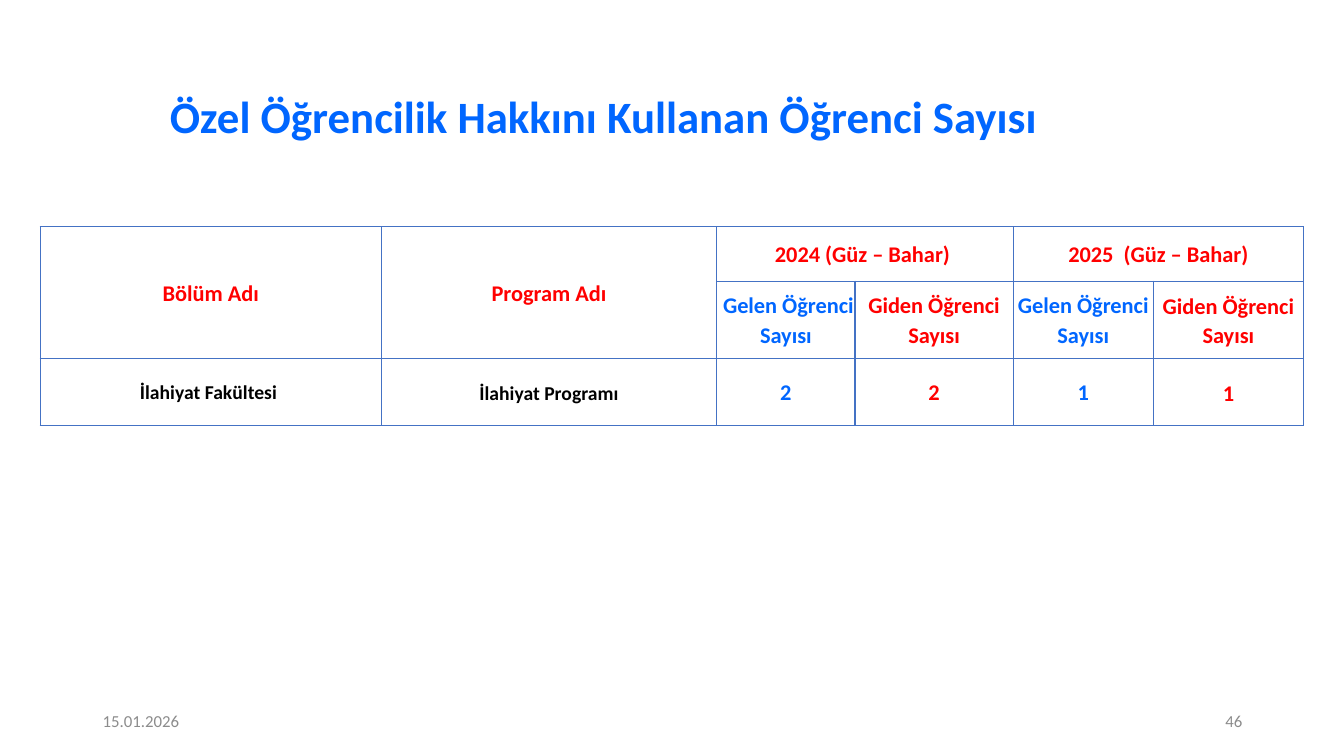
from lxml import etree
from pptx import Presentation
from pptx.dml.color import RGBColor
from pptx.enum import text
from pptx.oxml import ns
from pptx.util import Inches, Pt

# Content
FONT = "Calibri"
RED, BLUE, BLACK, GREY, WHITE, BORDER = (
    "FF0000", "0066FF", "000000", "8C8C8C", "FFFFFF", "4472C4")
TITLE = "Özel Öğrencilik Hakkını Kullanan Öğrenci Sayısı "
FOOTERS = [("15.01.2026", 0.92, text.PP_ALIGN.LEFT),
           ("46", 9.42, text.PP_ALIGN.RIGHT)]
COLUMNS = [3.38, 3.33, 1.37, 1.57, 1.39, 1.49]
ROWS = [0.54, 0.77, 0.66]
MERGES = [(0, 0, 1, 0), (0, 1, 1, 1), (0, 2, 0, 3), (0, 4, 0, 5)]
# row, column, wording, size, colour
CELLS = [
    (0, 0, "Bölüm Adı", 16, RED),
    (0, 1, "Program Adı", 16, RED),
    (0, 2, "2024 (Güz – Bahar) ", 16, RED),
    (0, 4, "2025  (Güz – Bahar)", 16, RED),
    (1, 2, " Gelen Öğrenci Sayısı", 16, BLUE),
    (1, 3, "Giden Öğrenci Sayısı", 16, RED),
    (1, 4, "Gelen Öğrenci Sayısı", 16, BLUE),
    (1, 5, "Giden Öğrenci Sayısı", 16, RED),
    (2, 0, "İlahiyat Fakültesi ", 14, BLACK),
    (2, 1, "İlahiyat Programı", 14, BLACK),
    (2, 2, "2", 16, BLUE),
    (2, 3, "2", 16, RED),
    (2, 4, "1", 16, BLUE),
    (2, 5, "1", 16, RED),
]


def rgb(value):
    return RGBColor.from_string(value)


def write(frame, wording, size, color, align, bold=False, spacing=None):
    para = frame.paragraphs[0]
    para.text = wording
    para.alignment = align
    para.line_spacing = spacing
    font = para.font
    font.name, font.size, font.bold = FONT, Pt(size), bold
    font.color.rgb = rgb(color)


def add_borders(cell):
    props = cell._tc.get_or_add_tcPr()
    for position, side in enumerate(("lnL", "lnR", "lnT", "lnB")):
        line = etree.Element(ns.qn(f"a:{side}"), w=str(Pt(1)))
        fill = etree.SubElement(line, ns.qn("a:solidFill"))
        etree.SubElement(fill, ns.qn("a:srgbClr"), val=BORDER)
        props.insert(position, line)


deck = Presentation()
deck.slide_width, deck.slide_height = Inches(13.33), Inches(7.5)
page = deck.slides.add_slide(deck.slide_layouts[5])

# Title
title = page.shapes.title
title.left, title.top = Inches(0.34), Inches(0.82)
title.width, title.height = Inches(11.4), Inches(0.73)
title.text_frame.vertical_anchor = text.MSO_ANCHOR.MIDDLE
write(title.text_frame, TITLE, 32, BLUE, text.PP_ALIGN.CENTER, True, 0.9)

# Date and page number
for wording, left, align in FOOTERS:
    box = page.shapes.add_textbox(Inches(left), Inches(6.95), Inches(3), Inches(0.4))
    box.text_frame.word_wrap = True
    box.text_frame.vertical_anchor = text.MSO_ANCHOR.MIDDLE
    write(box.text_frame, wording, 12, GREY, align)

# Table grid
table = page.shapes.add_table(
    len(ROWS), len(COLUMNS), Inches(0.4), Inches(2.25),
    Inches(sum(COLUMNS)), Inches(sum(ROWS))).table
for column, width in zip(table.columns, COLUMNS):
    column.width = Inches(width)
for row, height in zip(table.rows, ROWS):
    row.height = Inches(height)
for top, left, bottom, right in MERGES:
    table.cell(top, left).merge(table.cell(bottom, right))
for cell in table.iter_cells():
    cell.fill.solid()
    cell.fill.fore_color.rgb = rgb(WHITE)
    cell.margin_left = cell.margin_right = cell.margin_top = cell.margin_bottom = 0
    cell.vertical_anchor = text.MSO_ANCHOR.MIDDLE
    add_borders(cell)

# Table text
for row, column, wording, size, color in CELLS:
    cell = table.cell(row, column)
    if column in (1, 5):
        cell.margin_left = cell.margin_right = cell.margin_top = Inches(0.01)
    write(cell.text_frame, wording, size, color, text.PP_ALIGN.CENTER, True, 1.07)

deck.save("out.pptx")
